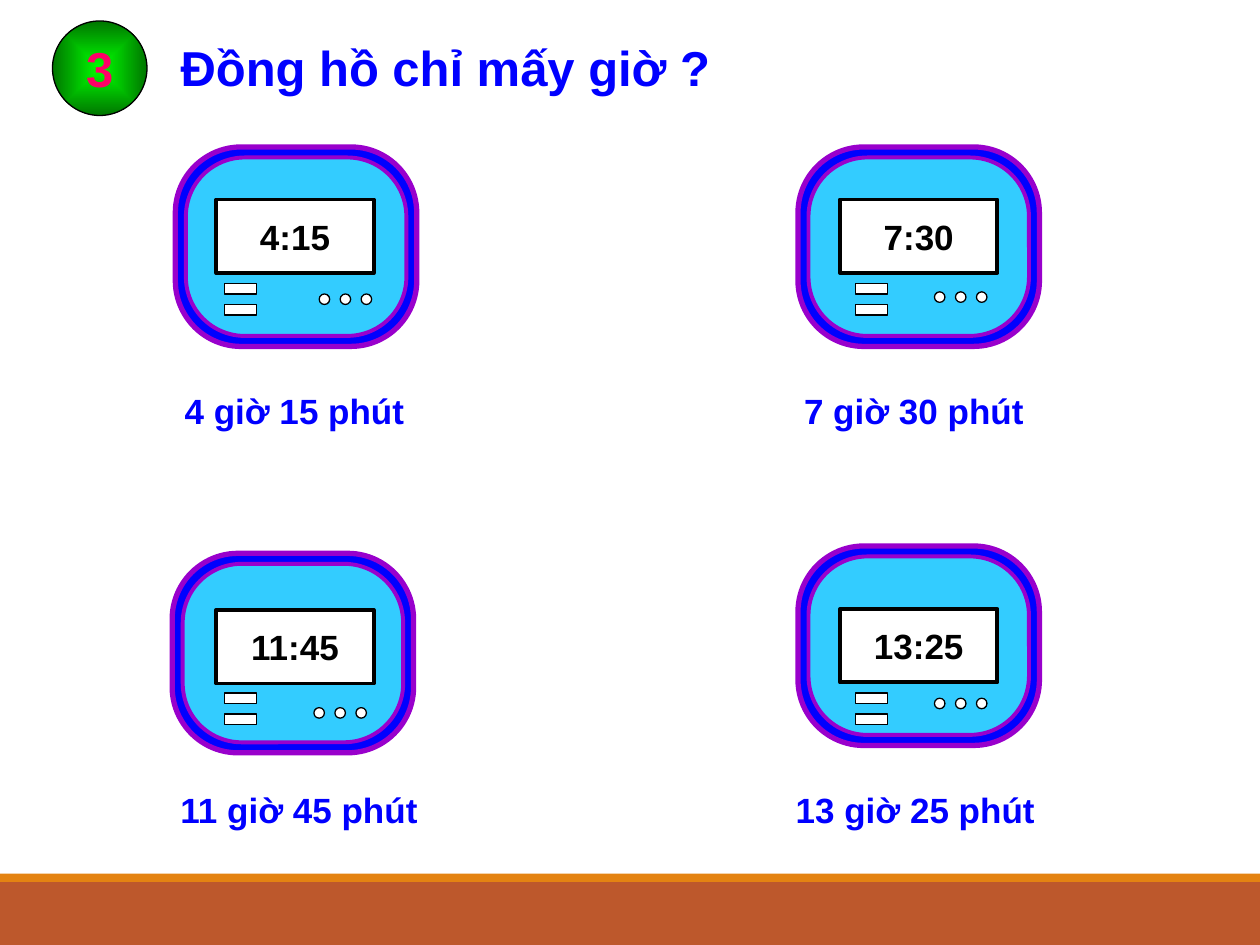
from lxml.etree import SubElement
from pptx import Presentation
from pptx.dml.color import RGBColor
from pptx.enum.shapes import MSO_SHAPE
from pptx.enum.text import MSO_ANCHOR, MSO_AUTO_SIZE, PP_ALIGN
from pptx.oxml.ns import qn
from pptx.util import Inches, Pt

BLACK = RGBColor(0x00, 0x00, 0x00)
WHITE = RGBColor(0xFF, 0xFF, 0xFF)
BLUE = RGBColor(0x00, 0x00, 0xFF)
SKY = RGBColor(0x33, 0xCC, 0xFF)
PURPLE = RGBColor(0x99, 0x00, 0xCC)
PINK = RGBColor(0xFF, 0x00, 0x66)
LIME = RGBColor(0x00, 0xFF, 0x00)
GREEN = RGBColor(0x00, 0x76, 0x00)
RUST = RGBColor(0xBD, 0x58, 0x2C)
ORANGE = RGBColor(0xE4, 0x83, 0x12)

# The slide is a grid of 120 columns by 90 rows
COLS, ROWS = 120, 90
CELL = Inches(10) / COLS


def grid(*cells):
    return [round(n * CELL) for n in cells]


class Sheet:
    font = "Arial"
    big, small = 28, 20

    def __init__(self, slide):
        self.slide = slide

    def text(self, shape, words, size, color, align=PP_ALIGN.LEFT):
        para = shape.text_frame.paragraphs[0]
        para.alignment = align
        run = para.add_run()
        run.text = words
        font = run.font
        font.name, font.size, font.bold = self.font, Pt(size), True
        font.color.rgb = color

    def shape(self, kind, box, fill, line=None, width=0.75, group=None):
        host = group or self.slide
        item = host.shapes.add_shape(kind, *grid(*box))
        item.shadow.inherit = False
        item.fill.solid()
        item.fill.fore_color.rgb = fill
        if line is None:
            item.line.fill.background()
        else:
            item.line.color.rgb = line
            item.line.width = Pt(width)
        return item

    def label(self, shape, words, size, color):
        frame = shape.text_frame
        frame.word_wrap = False
        frame.vertical_anchor = MSO_ANCHOR.MIDDLE
        self.text(shape, words, size, color, PP_ALIGN.CENTER)

    def title(self, box, words):
        item = self.slide.shapes.title
        item.left, item.top, item.width, item.height = grid(*box)
        frame = item.text_frame
        frame.auto_size = MSO_AUTO_SIZE.NONE
        frame.vertical_anchor = MSO_ANCHOR.TOP
        self.text(item, words, self.big, BLUE)

    def badge(self, box, words):
        item = self.shape(MSO_SHAPE.OVAL, box, GREEN, BLACK)
        item.fill.gradient()
        for stop, color in zip(item.fill.gradient_stops, (LIME, GREEN)):
            stop.color.rgb = color
        # Let the gradient follow the outline from the centre
        grad = item.element.spPr.find(qn("a:gradFill"))
        grad.remove(grad.find(qn("a:lin")))
        focus = SubElement(grad, qn("a:path"), {"path": "shape"})
        SubElement(focus, qn("a:fillToRect"), dict.fromkeys("ltrb", "50000"))
        self.label(item, words, self.big, PINK)

    def case(self, x, y):
        group = self.slide.shapes.add_group_shape()
        for box, fill, width in (((x, y, 23, 19), BLUE, 3),
                                 ((x + 1, y + 1, 21, 17), SKY, 2.25)):
            item = self.shape(MSO_SHAPE.ROUNDED_RECTANGLE, box, fill,
                              PURPLE, width, group)
            item.adjustments[0] = 0.33

    def screen(self, x, y, time):
        item = self.shape(MSO_SHAPE.RECTANGLE, (x, y, 15, 7), WHITE,
                          BLACK, 2.25)
        self.label(item, time, self.small, BLACK)

    def keys(self, kind, boxes):
        group = self.slide.shapes.add_group_shape()
        for box in boxes:
            self.shape(kind, box, WHITE, BLACK, group=group)

    def clock(self, case, screen, dots, bars, time):
        self.case(*case)
        self.screen(*screen, time)
        x, y = dots
        self.keys(MSO_SHAPE.OVAL, [(x + 2 * i, y, 1, 1) for i in range(3)])
        x, y = bars
        self.keys(MSO_SHAPE.RECTANGLE,
                  [(x, y + 2 * i, 3, 1) for i in range(2)])

    def caption(self, x, y, width, words):
        item = self.slide.shapes.add_textbox(*grid(x, y, width, 5.25))
        item.text_frame.word_wrap = True
        item.text_frame.auto_size = MSO_AUTO_SIZE.SHAPE_TO_FIT_TEXT
        self.text(item, words, self.small, BLUE)


# Each clock: case, screen, dots, bars, time
CLOCKS = [
    ((16.7, 14), (20.6, 19), (30.4, 28), (21.4, 27), "4:15"),
    ((76, 14), (80, 19), (89, 27.8), (81.5, 27), "7:30"),
    ((16.4, 52.7), (20.6, 58.1), (29.9, 67.4), (21.4, 66), "11:45"),
    ((76, 52), (80, 58), (89, 66.5), (81.5, 66), "13:25"),
]
CAPTIONS = [
    (16.4, 36.5, 33, "4 giờ 15 phút"),
    (75.4, 36.5, 29.3, "7 giờ 30 phút"),
    (16, 74.5, 27.5, "11 giờ 45 phút"),
    (74.6, 74.5, 30.8, "13 giờ 25 phút"),
]


def main():
    deck = Presentation()
    deck.slide_width, deck.slide_height = grid(COLS, ROWS)
    sheet = Sheet(deck.slides.add_slide(deck.slide_layouts[5]))

    # Footer bands
    sheet.shape(MSO_SHAPE.RECTANGLE, (0, 84, COLS, 6), RUST)
    sheet.shape(MSO_SHAPE.RECTANGLE, (0, 83.2, COLS, 0.8), ORANGE)

    # Heading
    sheet.badge((5, 2, 9, 9), "3")
    sheet.title((16, 3, 55, 6.9), "Đồng hồ chỉ mấy giờ ?")

    # Clocks and their readings
    for parts in CLOCKS:
        sheet.clock(*parts)
    for parts in CAPTIONS:
        sheet.caption(*parts)

    deck.save("out.pptx")


if __name__ == "__main__":
    main()
